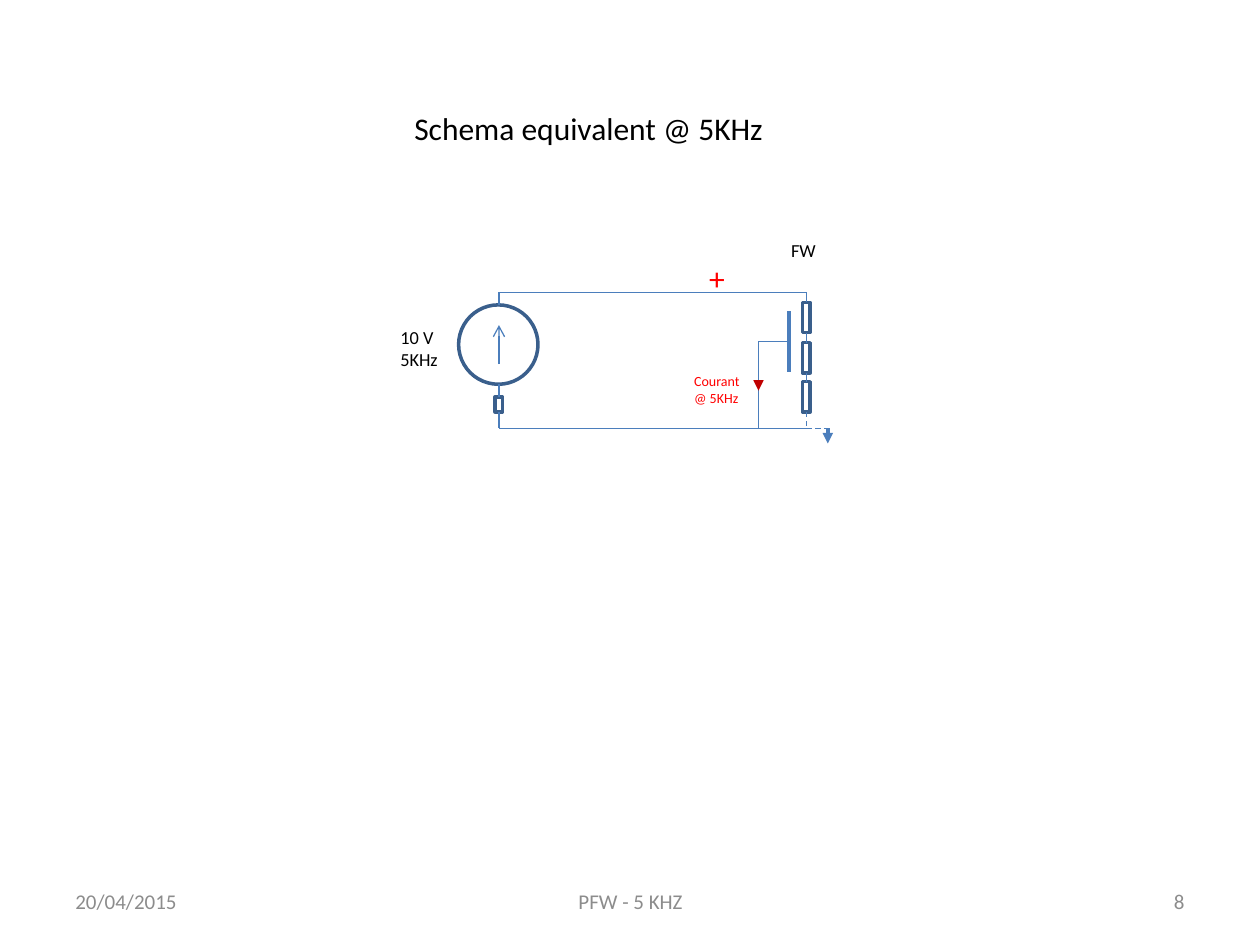
from lxml import etree
from pptx import Presentation
from pptx.dml.color import RGBColor
from pptx.enum.dml import MSO_LINE
from pptx.enum.shapes import MSO_CONNECTOR, MSO_SHAPE
from pptx.enum.text import MSO_ANCHOR, MSO_AUTO_SIZE, PP_ALIGN
from pptx.oxml.ns import qn
from pptx.util import Inches, Pt

STRAIGHT = MSO_CONNECTOR.STRAIGHT
OVAL, RECTANGLE = MSO_SHAPE.OVAL, MSO_SHAPE.RECTANGLE
DASH = MSO_LINE.DASH
MIDDLE = MSO_ANCHOR.MIDDLE
FIT_SHAPE = MSO_AUTO_SIZE.SHAPE_TO_FIT_TEXT
LEFT, CENTER, RIGHT = PP_ALIGN.LEFT, PP_ALIGN.CENTER, PP_ALIGN.RIGHT
TOP_SIDE, BOTTOM_SIDE = 0, 2

FONT = "Calibri"
COLORS = {
    "outline": "3A5F8C",
    "wire": "4B7EBC",
    "current": "C00000",
    "red": "FF0000",
    "black": "000000",
    "footer": "8C8C8C",
}
SOURCE_X, GATE_X, CHANNEL_X, LOAD_X, GROUND_X = 3.96, 6.02, 6.26, 6.4, 6.57
TOP_Y, TAP_Y, BOTTOM_Y = 2.32, 2.71, 3.4


def color(name):
    return RGBColor.from_string(COLORS[name])


def add_outline(slide, kind, left, top, width, height):
    shape = slide.shapes.add_shape(
        kind, Inches(left), Inches(top), Inches(width), Inches(height))
    shape.shadow.inherit = False
    shape.fill.background()
    shape.line.color.rgb = color("outline")
    shape.line.width = Pt(2)
    return shape


def add_resistor(slide, center_x, top, height):
    width = 0.06
    return add_outline(slide, RECTANGLE, center_x - width / 2, top, width, height)


def add_wire(slide, start, end, above=None, below=None, width=0.75,
             stroke="wire", dash=None, arrow=None):
    wire = slide.shapes.add_connector(
        STRAIGHT, *(Inches(value) for value in (*start, *end)))
    if above is not None:
        wire.begin_connect(above, BOTTOM_SIDE)
    if below is not None:
        wire.end_connect(below, TOP_SIDE)
    wire.line.color.rgb = color(stroke)
    wire.line.width = Pt(width)
    if dash is not None:
        wire.line.dash_style = dash
    properties = wire.line._get_or_add_ln()
    if arrow is not None:
        etree.SubElement(properties, qn("a:tailEnd"), type=arrow)
    etree.SubElement(properties.getparent(), qn("a:effectLst"))
    return wire


def add_text(slide, box, lines, size, fill, align=LEFT):
    shape = slide.shapes.add_textbox(*(Inches(value) for value in box))
    frame = shape.text_frame
    for index, line in enumerate(lines):
        paragraph = frame.paragraphs[0] if index == 0 else frame.add_paragraph()
        paragraph.alignment = align
        run = paragraph.add_run()
        run.text = line
        run.font.name = FONT
        run.font.size = Pt(size)
        run.font.color.rgb = color(fill)
    return frame


def add_label(slide, box, lines, size, fill="black"):
    frame = add_text(slide, box, lines, size, fill)
    frame.word_wrap = False
    frame.auto_size = FIT_SHAPE


def add_footer(slide, left, width, text, align):
    frame = add_text(slide, (left, 6.95, width, 0.4), [text], 12, "footer", align)
    frame.word_wrap = True
    frame.vertical_anchor = MIDDLE


def add_source(slide):
    add_outline(slide, OVAL, 3.64, 2.42, 0.63, 0.63)
    resistor = add_resistor(slide, SOURCE_X, 3.15, 0.12)
    add_wire(slide, (SOURCE_X, 2.89), (SOURCE_X, 2.58), arrow="arrow")
    add_wire(slide, (SOURCE_X, TOP_Y), (SOURCE_X, 2.42))
    add_wire(slide, (SOURCE_X, 3.05), (SOURCE_X, 3.15), below=resistor)
    add_wire(slide, (SOURCE_X, 3.27), (SOURCE_X, BOTTOM_Y), above=resistor)


def add_load(slide):
    tops, height = (2.4, 2.72, 3.03), 0.24
    resistors = [add_resistor(slide, LOAD_X, top, height) for top in tops]
    starts = [TOP_Y] + [top + height for top in tops]
    ends = [*tops, BOTTOM_Y]
    uppers, lowers = [None, *resistors], [*resistors, None]
    dashes = [None, None, None, DASH]
    for start, end, upper, lower, dash in zip(starts, ends, uppers, lowers, dashes):
        add_wire(slide, (LOAD_X, start), (LOAD_X, end), upper, lower, dash=dash)


def add_circuit_wires(slide):
    add_wire(slide, (SOURCE_X, TOP_Y), (LOAD_X, TOP_Y))
    add_wire(slide, (LOAD_X, BOTTOM_Y), (SOURCE_X, BOTTOM_Y))
    add_wire(slide, (CHANNEL_X, 2.47), (CHANNEL_X, 2.95), width=2)
    add_wire(slide, (CHANNEL_X, TAP_Y), (GATE_X, TAP_Y))
    add_wire(slide, (GATE_X, TAP_Y), (GATE_X, BOTTOM_Y))
    add_wire(slide, (LOAD_X, BOTTOM_Y), (GROUND_X, BOTTOM_Y), dash=DASH)
    add_wire(slide, (GROUND_X, BOTTOM_Y), (GROUND_X, 3.52), width=2,
             dash=DASH, arrow="triangle")
    add_wire(slide, (GATE_X, 3.03), (GATE_X, 3.1), stroke="current",
             arrow="triangle")


def main():
    presentation = Presentation()
    presentation.slide_width = Inches(10)
    presentation.slide_height = Inches(7.5)
    slide = presentation.slides.add_slide(presentation.slide_layouts[6])

    add_source(slide)
    add_load(slide)
    add_circuit_wires(slide)

    add_label(slide, (3.19, 0.82, 3.06, 0.4), ["Schema equivalent @ 5KHz"], 18)
    add_label(slide, (5.53, 2.01, 0.33, 0.4), ["+"], 18, "red")
    add_label(slide, (6.18, 1.85, 0.4, 0.28), ["FW"], 10.5)
    add_label(slide, (3.08, 2.54, 0.5, 0.45), ["10 V", "5KHz"], 10.5)
    add_label(slide, (5.41, 2.91, 0.59, 0.37), ["Courant", "@ 5KHz"], 8, "red")

    add_footer(slide, 0.5, 2.33, "20/04/2015", LEFT)
    add_footer(slide, 3.42, 3.17, "PFW - 5 KHZ", CENTER)
    add_footer(slide, 7.17, 2.33, "8", RIGHT)
    presentation.save("out.pptx")


if __name__ == "__main__":
    main()
